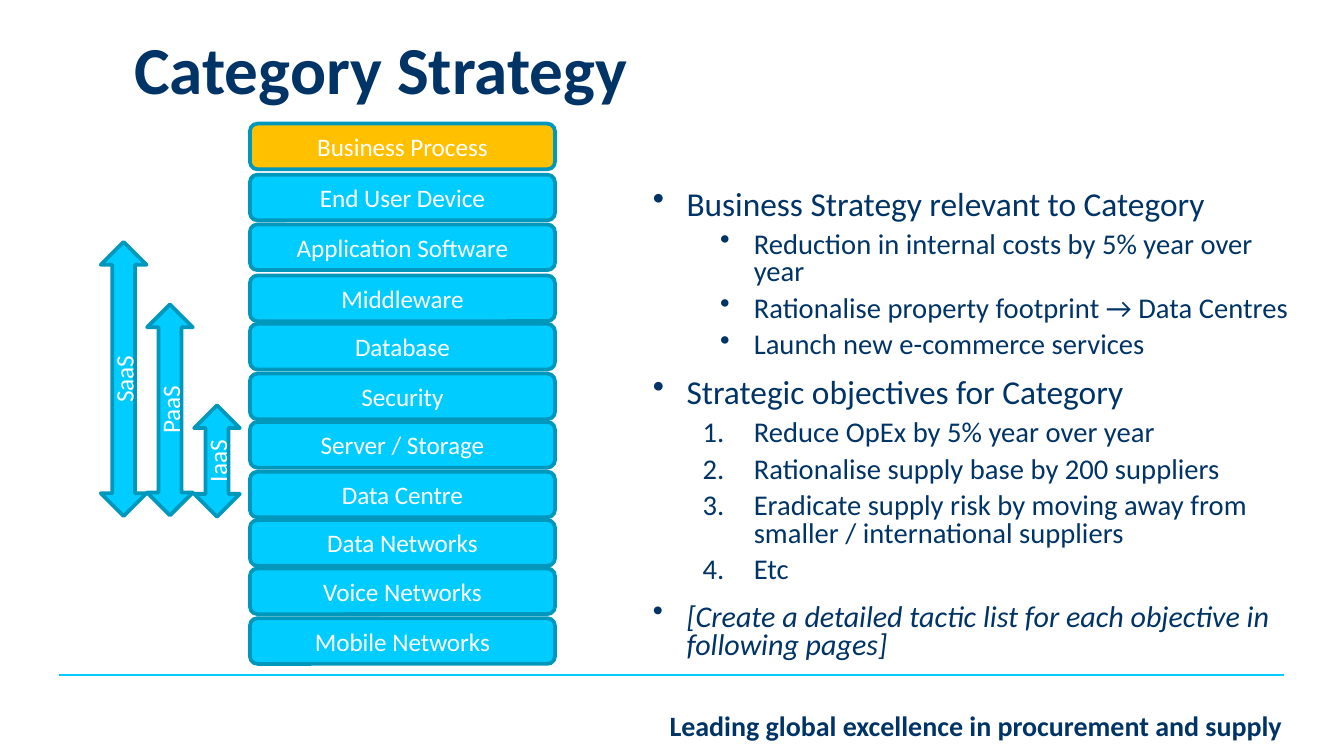
from dataclasses import dataclass

from lxml import etree
from pptx import Presentation
from pptx import util as u
from pptx.dml.color import RGBColor
from pptx.enum import shapes, text
from pptx.oxml import ns

EMU_PER_PX = 9144  # 100 px to the inch


@dataclass(frozen=True)
class Theme:
    font: str = "Calibri"
    navy: str = "003366"
    cyan: str = "00CCFF"
    outline: str = "0097BD"
    amber: str = "FFC000"
    white: str = "FFFFFF"
    title_pt: float = 36
    label_pt: float = 13.5
    footer_pt: float = 15
    heading_pt: float = 17.9
    detail_pt: float = 15.3
    note_pt: float = 16.1


@dataclass(frozen=True)
class Box:
    left: int
    top: int
    width: int
    height: int


@dataclass(frozen=True)
class Level:
    size: float
    margin: int
    hanging: int
    before: int
    bullet: str = "•"  # an empty bullet means automatic numbers
    italic: bool = False


@dataclass(frozen=True)
class Service:
    name: str
    length: int


T = Theme()
HEADING = Level(T.heading_pt, 25, 25, 10)
DETAIL = Level(T.detail_pt, 75, 25, 5)
NUMBERED = Level(T.detail_pt, 75, 38, 5, bullet="")
NOTE = Level(T.note_pt, 25, 25, 10, italic=True)

LAYERS = ["Business Process", "End User Device", "Application Software",
          "Middleware", "Database", "Security", "Server / Storage",
          "Data Centre", "Data Networks", "Voice Networks", "Mobile Networks"]
SERVICES = [Service("SaaS", 204), Service("PaaS", 157), Service("IaaS", 83)]
STRATEGY = [
    (HEADING, "Business Strategy relevant to Category"),
    (DETAIL, "Reduction in internal costs by 5% year over year"),
    (DETAIL, "Rationalise property footprint → Data Centres"),
    (DETAIL, "Launch new e-commerce services"),
    (HEADING, "Strategic objectives for Category"),
    (NUMBERED, "Reduce OpEx by 5% year over year"),
    (NUMBERED, "Rationalise supply base by 200 suppliers"),
    (NUMBERED, "Eradicate supply risk by moving away from smaller / international suppliers"),
    (NUMBERED, "Etc"),
    (NOTE, "[Create a detailed tactic list for each objective in following pages]"),
]


def px(n: float) -> u.Emu:
    return u.Emu(round(n * EMU_PER_PX))


def place(box: Box) -> list:
    return [px(n) for n in (box.left, box.top, box.width, box.height)]


def style(p, size: float, color: str, bold=False, italic=False) -> None:
    for r in p.runs:
        r.font.name, r.font.size = T.font, u.Pt(size)
        r.font.bold, r.font.italic = bold, italic
        r.font.color.rgb = RGBColor.from_string(color)


def add_text(s, box: Box, value: str, size: float):
    """Add a bold navy text box and return its shape."""
    sp = s.shapes.add_textbox(*place(box))
    tf = sp.text_frame
    tf.word_wrap = True
    tf.text = value
    style(tf.paragraphs[0], size, T.navy, bold=True)
    return sp


def add_block(s, kind, box: Box, label: str, fill: str):
    """Add an outlined shape with a centred white label."""
    sp = s.shapes.add_shape(kind, *place(box))
    sp.shadow.inherit = False
    sp.fill.solid()
    sp.fill.fore_color.rgb = RGBColor.from_string(fill)
    sp.line.color.rgb = RGBColor.from_string(T.outline)
    sp.line.width = u.Pt(2)
    tf = sp.text_frame
    tf.text = label
    tf.vertical_anchor = text.MSO_ANCHOR.MIDDLE
    tf.paragraphs[0].alignment = text.PP_ALIGN.CENTER
    style(tf.paragraphs[0], T.label_pt, T.white)
    return sp


def add_item(p, level: Level, value: str, first: bool) -> None:
    p.text = value
    pPr = p._p.get_or_add_pPr()
    pPr.set("marL", str(px(level.margin)))
    pPr.set("indent", str(-px(level.hanging)))
    if level.bullet:
        etree.SubElement(pPr, ns.qn("a:buChar")).set("char", level.bullet)
    else:
        etree.SubElement(pPr, ns.qn("a:buAutoNum")).set("type", "arabicPeriod")
    p.level = 1 if level.margin > HEADING.margin else 0
    p.line_spacing = 0.8
    p.space_before = u.Pt(0 if first else level.before)
    style(p, level.size, T.navy, italic=level.italic)


def layer_top(i: int) -> int:
    """The first four layers are spaced slightly wider than the rest."""
    return round(92 + 37.67 * min(i, 3) + 36.4 * max(i - 3, 0))


def main() -> None:
    prs = Presentation()
    prs.slide_width, prs.slide_height = px(1000), px(562.5)
    s = prs.slides.add_slide(prs.slide_layouts[6])

    # Footer and rule
    footer = add_text(s, Box(352, 522, 612, 35),
                      "Leading global excellence in procurement and supply", T.footer_pt)
    footer.text_frame.paragraphs[0].alignment = text.PP_ALIGN.RIGHT
    rule = s.shapes.add_connector(shapes.MSO_CONNECTOR.STRAIGHT,
                                  px(44), px(502), px(955), px(502))
    rule.line.color.rgb = RGBColor.from_string(T.cyan)
    rule.line.width = u.Pt(1)
    etree.SubElement(rule._element.spPr, ns.qn("a:effectLst"))

    # Title
    tf = add_text(s, Box(100, 30, 831, 109), "Category Strategy", T.title_pt).text_frame
    tf.margin_left = tf.margin_right = tf.margin_top = tf.margin_bottom = 0
    tf.paragraphs[0].line_spacing = u.Pt(36)

    # Technology stack
    for i, name in enumerate(LAYERS):
        add_block(s, shapes.MSO_SHAPE.ROUNDED_RECTANGLE, Box(186, layer_top(i), 227, 34),
                  name, T.cyan if i else T.amber)

    # Strategy and objectives
    tf = s.shapes.add_textbox(*place(Box(476, 137, 505, 357))).text_frame
    tf.word_wrap = True
    for i, (level, value) in enumerate(STRATEGY):
        p = tf.add_paragraph() if i else tf.paragraphs[0]
        add_item(p, level, value, first=i == 0)

    # Service spans: turned arrows that share one bottom edge
    bottom, thickness = 384, 34
    for i, service in enumerate(SERVICES):
        center_x, center_y = 92 + 35 * i, bottom - service.length / 2
        box = Box(round(center_x - service.length / 2), round(center_y - thickness / 2),
                  service.length, thickness)
        sp = add_block(s, shapes.MSO_SHAPE.LEFT_RIGHT_ARROW, box, service.name, T.cyan)
        sp.rotation = 270

    prs.save("out.pptx")


if __name__ == "__main__":
    main()
